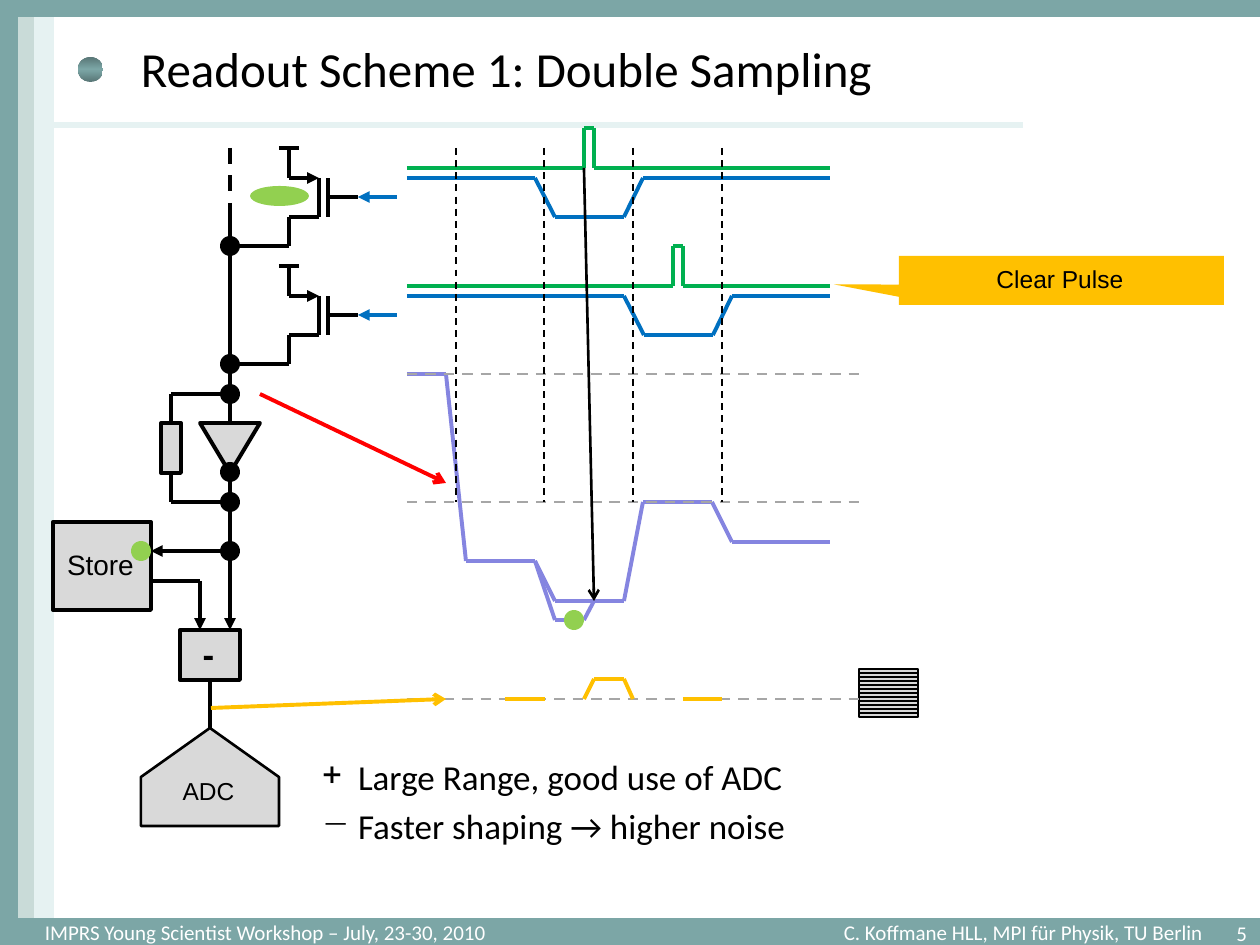
import copy

import pptx
import pptx.dml.color
import pptx.enum.dml
import pptx.enum.shapes
import pptx.enum.text
import pptx.oxml.ns
import pptx.util
from lxml import etree

SHAPE = pptx.enum.shapes.MSO_SHAPE
ALIGN = pptx.enum.text.PP_ALIGN
ANCHOR = pptx.enum.text.MSO_ANCHOR
qn = pptx.oxml.ns.qn
PX = 914400 // 126  # EMU in one px

# Content
TITLE = "Readout Scheme 1: Double Sampling"
FOOTER = "IMPRS Young Scientist Workshop – July, 23-30, 2010\tC. Koffmane HLL, MPI für Physik, TU Berlin"
PAGE = "5"
REMARKS = [("+", "Large Range, good use of ADC"), ("−", "Faster shaping → higher noise")]

TEAL, MINT, PALE = "7CA6A6", "C9DBD8", "E6F2F2"
BLACK, WHITE, GREY, DASH_GREY = "000000", "FFFFFF", "D9D9D9", "A6A6A6"
BLUE, GREEN, PURPLE, GOLD, RED, LIME = "0070C0", "00B050", "8585E0", "FFC000", "FF0000", "92D050"

BANDS = [  # left, top, width, height, colour
    (17, 0, 18, 919, MINT), (35, 0, 18, 945, PALE), (0, 919, 1260, 26, TEAL),
    (0, 0, 17, 919, TEAL), (0, 0, 1260, 16, TEAL),
]

# Pixel rows: the second is one row lower and one time step later
ROW_HEIGHT, TIME_STEP, ROWS = 118, 89, 2
TRANSISTOR = [
    [(279, 148), (299, 148)], [(289, 148), (289, 178)], [(319, 217), (319, 178)],
    [(328, 217), (328, 178)], [(328, 197), (358, 197)],
    [(319, 217), (289, 217), (289, 246), (239, 246)],
]
TRANSISTOR_SOURCE = [(289, 178), (319, 178)]
GATE_INPUT = [(397, 197), (358, 197)]
PULSE_START, PULSE_END = 407, 830
GATE_PULSE = (178, [(535, 178), (555, 217), (624, 217), (643, 178)], BLUE)
CLEAR_PULSE = (168, [(584, 168), (584, 128), (594, 128), (594, 168)], GREEN)

BUS = 230
BUS_DOTS = [394, 472, 502, 551]
SAMPLE_TIMES = [456, 544, 633, 722]
LEVELS = [374, 502]
OUTPUT_LEVEL = 699
SIGNALS = [
    [(407, 374), (446, 374), (466, 561), (535, 561), (555, 601), (624, 601),
     (643, 502), (712, 502), (732, 542), (830, 542)],
    [(535, 561), (555, 620), (584, 620), (594, 601)],
]
OUTPUTS = [
    [(505, 699), (545, 699)],
    [(584, 699), (594, 679), (624, 679), (633, 699)],
    [(683, 699), (722, 699)],
]
POINTERS = [  # points, colour, width
    ([(584, 168), (594, 601)], BLACK, 1.5),
    ([(260, 394), (446, 483)], RED, 2.25),
    ([(211, 708), (446, 699)], GOLD, 2.25),
]

deck = pptx.Presentation()
deck.slide_width, deck.slide_height = 1260 * PX, 945 * PX
slide = deck.slides.add_slide(deck.slide_layouts[6])


def rgb(colour):
    return pptx.dml.color.RGBColor.from_string(colour)


def block(kind, left, top, width, height, fill, line=None, weight=2.25):
    shape = slide.shapes.add_shape(kind, left * PX, top * PX, width * PX, height * PX)
    shape.shadow.inherit = False
    shape.fill.solid()
    shape.fill.fore_color.rgb = rgb(fill)
    if line:
        shape.line.color.rgb = rgb(line)
        shape.line.width = pptx.util.Pt(weight)
    else:
        shape.line.fill.background()
    return shape


def dot(x, y, colour):
    return block(SHAPE.OVAL, x - 10, y - 10, 20, 20, colour)


def trace(points, colour=BLACK, weight=2.25, dashed=False, arrow=None):
    """Draw straight pieces through the points; the last may carry an arrowhead."""
    pieces = []
    for (x1, y1), (x2, y2) in zip(points, points[1:]):
        piece = slide.shapes.add_connector(
            pptx.enum.shapes.MSO_CONNECTOR.STRAIGHT, x1 * PX, y1 * PX, x2 * PX, y2 * PX)
        piece.line.color.rgb = rgb(colour)
        piece.line.width = pptx.util.Pt(weight)
        if dashed:
            piece.line.dash_style = pptx.enum.dml.MSO_LINE.DASH
        etree.SubElement(piece.element.spPr, qn("a:effectLst"))
        pieces.append(piece)
    if arrow:
        etree.SubElement(pieces[-1].line._get_or_add_ln(), qn("a:tailEnd"), type=arrow)
    return pieces


def write(shape, text, size, font="Calibri", colour=BLACK, bold=False, align=ALIGN.LEFT,
          anchor=ANCHOR.TOP, insets=(13, 6, 13, 6), wrap=True, bullets="", tab=None):
    frame = shape.text_frame
    frame.word_wrap = wrap
    frame.vertical_anchor = anchor
    frame.margin_left, frame.margin_top, frame.margin_right, frame.margin_bottom = (
        inset * PX for inset in insets)
    for i, words in enumerate(text.split("\n")):
        para = frame.paragraphs[0] if i == 0 else frame.add_paragraph()
        para.alignment = align
        props = para._p.get_or_add_pPr()
        if i:
            para.space_before = pptx.util.Pt(4)
        if bullets:
            props.set("marL", str(36 * PX))
            props.set("indent", str(-36 * PX))
            bullet_colour = etree.SubElement(props, qn("a:buClr"))
            etree.SubElement(bullet_colour, qn("a:srgbClr"), val=colour)
            etree.SubElement(props, qn("a:buChar"), char=bullets[i])
        if tab:
            tabs = etree.SubElement(props, qn("a:tabLst"))
            etree.SubElement(tabs, qn("a:tab"), pos=str(tab * PX), algn="r")
        run = para.add_run()
        run.text = words
        run.font.name, run.font.size, run.font.bold = font, pptx.util.Pt(size), bold
        run.font.color.rgb = rgb(colour)


def text_box(left, top, width, height, text, size, **form):
    box = slide.shapes.add_textbox(left * PX, top * PX, width * PX, height * PX)
    write(box, text, size, **form)


# Frame, title and footer
for *place, colour in BANDS:
    block(SHAPE.RECTANGLE, *place, colour, colour, 0.75)
trace([(40, 125), (1023, 125)], PALE, 3)
title_ball = block(SHAPE.OVAL, 78, 57, 25, 25, TEAL)
title_ball.fill.gradient()
title_ball.fill.gradient_angle = 90
first_stop = title_ball.element.spPr.find(".//" + qn("a:gs"))
first_stop.addnext(copy.deepcopy(first_stop))
for stop, position, colour in zip(title_ball.fill.gradient_stops, (0, 0.5, 1), ("597777", TEAL, "597777")):
    stop.position = position
    stop.color.rgb = rgb(colour)
text_box(53, 26, 1071, 84, TITLE, 28, anchor=ANCHOR.MIDDLE, insets=(88, 6, 13, 6))
text_box(1134, 915, 126, 30, PAGE, 12, colour=WHITE, align=ALIGN.RIGHT)
text_box(32, 920, 1174, 25, FOOTER, 12, colour=WHITE, anchor=ANCHOR.MIDDLE,
         insets=(13, 0, 0, 0), tab=1158)

# Readout bus
trace([(BUS, 148), (BUS, 217)], dashed=True)
trace([(BUS, 207), (BUS, 423)])
trace([(BUS, 374), (BUS, 630)], arrow="triangle")

# Pixel rows with their gate and clear pulses
for row in range(ROWS):
    def shifted(points, dx=0):
        return [(x + dx, y + row * ROW_HEIGHT) for x, y in points]

    for part in TRANSISTOR:
        trace(shifted(part))
    trace(shifted(TRANSISTOR_SOURCE), arrow="triangle")
    trace(shifted(GATE_INPUT), BLUE, arrow="triangle")
    dot(BUS, 246 + row * ROW_HEIGHT, BLACK)
    for base, pulse, colour in (GATE_PULSE, CLEAR_PULSE):
        trace(shifted([(PULSE_START, base)]) + shifted(pulse, row * TIME_STEP)
              + shifted([(PULSE_END, base)]), colour)
block(SHAPE.OVAL, 250, 186, 59, 20, LIME)

# Amplifier with feedback resistor
amplifier = block(SHAPE.ISOSCELES_TRIANGLE, 200, 423, 60, 50, GREY, BLACK)
amplifier.rotation = 180
resistor = block(SHAPE.RECTANGLE, 161, 423, 20, 50, GREY, BLACK)
trace([(BUS, 394), (171, 394), (171, 423)])[-1].end_connect(resistor, 0)
trace([(BUS, 502), (171, 502), (171, 473)])[-1].end_connect(resistor, 2)

# Store, subtraction and ADC
LABEL = dict(font="Arial", align=ALIGN.CENTER, anchor=ANCHOR.MIDDLE, insets=(0, 0, 3, 3))
store = block(SHAPE.RECTANGLE, 53, 522, 98, 88, GREY, BLACK)
write(store, "Store", 16, wrap=False, **LABEL)
minus = block(SHAPE.RECTANGLE, 180, 630, 60, 50, GREY, BLACK)
write(minus, "-", 20, bold=True, wrap=False, **LABEL)
adc = block(SHAPE.PENTAGON, 161, 708, 98, 138, GREY, BLACK, 1.5)
adc.rotation = 270
write(adc, "ADC", 14, **LABEL)
adc.text_frame._txBody.bodyPr.set("vert", "vert")
trace([(BUS, 551), (151, 551)], arrow="triangle")
trace([(151, 581), (200, 581), (200, 630)], arrow="triangle")
trace([(210, 680), (210, 728)])[0].begin_connect(minus, 2)
for y in BUS_DOTS:
    dot(BUS, y, BLACK)
dot(141, 551, LIME)

# Memory stack at the end of the output level
cells = [block(SHAPE.RECTANGLE, 859, 669 + 4 * i, 59, 4, GREY, BLACK, 1.5) for i in range(12)]
output_line = trace([(407, OUTPUT_LEVEL), (859, OUTPUT_LEVEL)], DASH_GREY, 1.5, dashed=True)
output_line[0].end_connect(cells[7], 1)

# Signal at the amplifier and after subtraction
for signal in SIGNALS:
    trace(signal, PURPLE)
for y in LEVELS:
    trace([(407, y), (859, y)], DASH_GREY, 1.5, dashed=True)
for x in SAMPLE_TIMES:
    trace([(x, 148), (x, 502)], weight=1, dashed=True)
for output in OUTPUTS:
    trace(output, GOLD)
dot(574, 620, LIME)
for points, colour, weight in POINTERS:
    trace(points, colour, weight, arrow="arrow")

# Callout and remarks
callout = block(SHAPE.RECTANGULAR_CALLOUT, 899, 256, 325, 49, GOLD)
callout.adjustments[0], callout.adjustments[1] = -0.7, 0.08
write(callout, "Clear Pulse", 14, wrap=False, **LABEL)
text_box(309, 750, 940, 140, "\n".join(words for _, words in REMARKS), 20,
         bullets=[sign for sign, _ in REMARKS])

deck.save("out.pptx")
